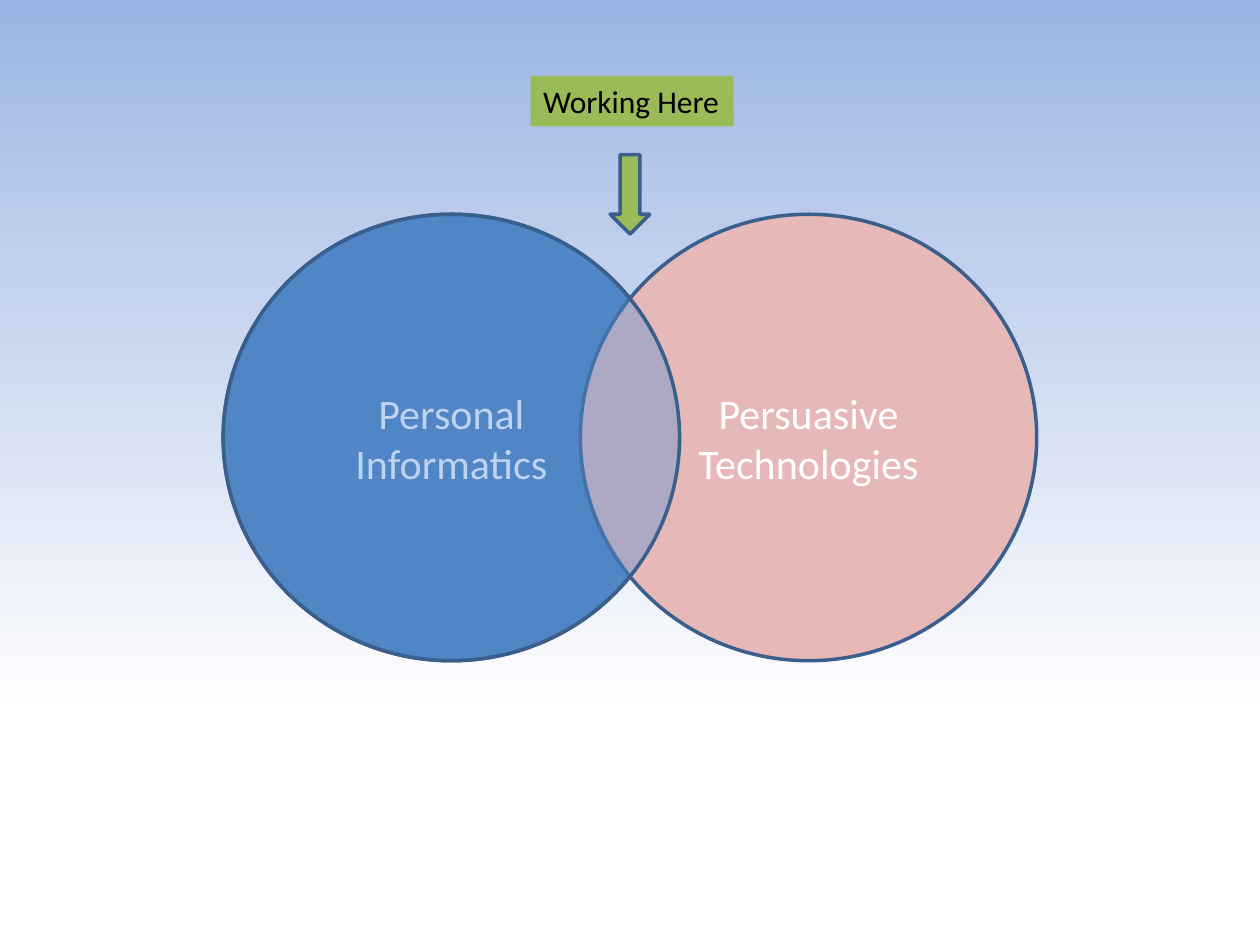
from copy import deepcopy

from lxml import etree
from pptx import Presentation
from pptx.dml.color import RGBColor
from pptx.enum import shapes, text
from pptx.oxml.ns import qn
from pptx.util import Cm, Pt

BLUE = RGBColor(0x4F, 0x81, 0xBD)
SKY = RGBColor(0x55, 0x8E, 0xD5)
PINK = RGBColor(0xE6, 0xB9, 0xB8)
GREEN = RGBColor(0x9B, 0xBB, 0x59)
OUTLINE = RGBColor(0x3A, 0x5F, 0x8C)
WHITE = RGBColor(0xFF, 0xFF, 0xFF)
BLACK = RGBColor(0x00, 0x00, 0x00)
BACKGROUND = [
    (0, RGBColor(0x9A, 0xB5, 0xE4)),
    (0.29, RGBColor(0xC2, 0xD1, 0xED)),
    (0.76, WHITE),
]

CIRCLE_W, CIRCLE_H = 9.2, 9
CIRCLE_TOP = 4.32
LEFT_X, RIGHT_X = 4.5, 11.7


def set_background(s):
    fill = s.background.fill
    fill.gradient()
    fill.gradient_angle = 270
    stops = s.element.find(".//" + qn("a:gsLst"))
    stops.append(deepcopy(stops[-1]))
    for stop, (position, color) in zip(fill.gradient_stops, BACKGROUND):
        stop.position = position
        stop.color.rgb = color


def write(tf, words, size, color, align):
    p = tf.paragraphs[0]
    p.alignment = align
    r = p.add_run()
    r.text = words
    for name, value in {"name": "Calibri", "size": Pt(size)}.items():
        setattr(r.font, name, value)
    r.font.color.rgb = color


def add_outlined(s, kind, box, color, words=None, opacity=None):
    sp = s.shapes.add_shape(kind, *map(Cm, box))
    sp.shadow.inherit = False
    sp.fill.solid()
    sp.fill.fore_color.rgb = color
    sp.line.color.rgb = OUTLINE
    sp.line.width = Pt(2)
    if opacity is not None:
        clr = sp.element.spPr.find(qn("a:solidFill"))[0]
        etree.SubElement(clr, qn("a:alpha"), val=str(opacity * 1000))
    if words:
        sp.text_frame.vertical_anchor = text.MSO_ANCHOR.MIDDLE
        write(sp.text_frame, words, 24, WHITE, text.PP_ALIGN.CENTER)


def add_circle(s, left, color, words=None, opacity=None):
    box = (left, CIRCLE_TOP, CIRCLE_W, CIRCLE_H)
    add_outlined(s, shapes.MSO_SHAPE.OVAL, box, color, words, opacity)


def add_label(s, box, words):
    sp = s.shapes.add_textbox(*map(Cm, box))
    sp.fill.solid()
    sp.fill.fore_color.rgb = GREEN
    tf = sp.text_frame
    settings = {"word_wrap": False, "auto_size": text.MSO_AUTO_SIZE.SHAPE_TO_FIT_TEXT}
    for name, value in settings.items():
        setattr(tf, name, value)
    write(tf, words, 18, BLACK, text.PP_ALIGN.LEFT)


def main():
    prs = Presentation()
    prs.slide_width, prs.slide_height = Cm(25.4), Cm(19.05)
    s = prs.slides.add_slide(prs.slide_layouts[6])
    set_background(s)
    add_circle(s, LEFT_X, BLUE, "Personal Informatics")
    add_circle(s, RIGHT_X, PINK, "Persuasive Technologies")
    add_circle(s, LEFT_X, SKY, opacity=39)
    add_outlined(s, shapes.MSO_SHAPE.DOWN_ARROW, (12.3, 3.12, 0.8, 1.6), GREEN)
    add_label(s, (10.7, 1.53, 4.09, 1.02), "Working Here")
    prs.save("out.pptx")


if __name__ == "__main__":
    main()
